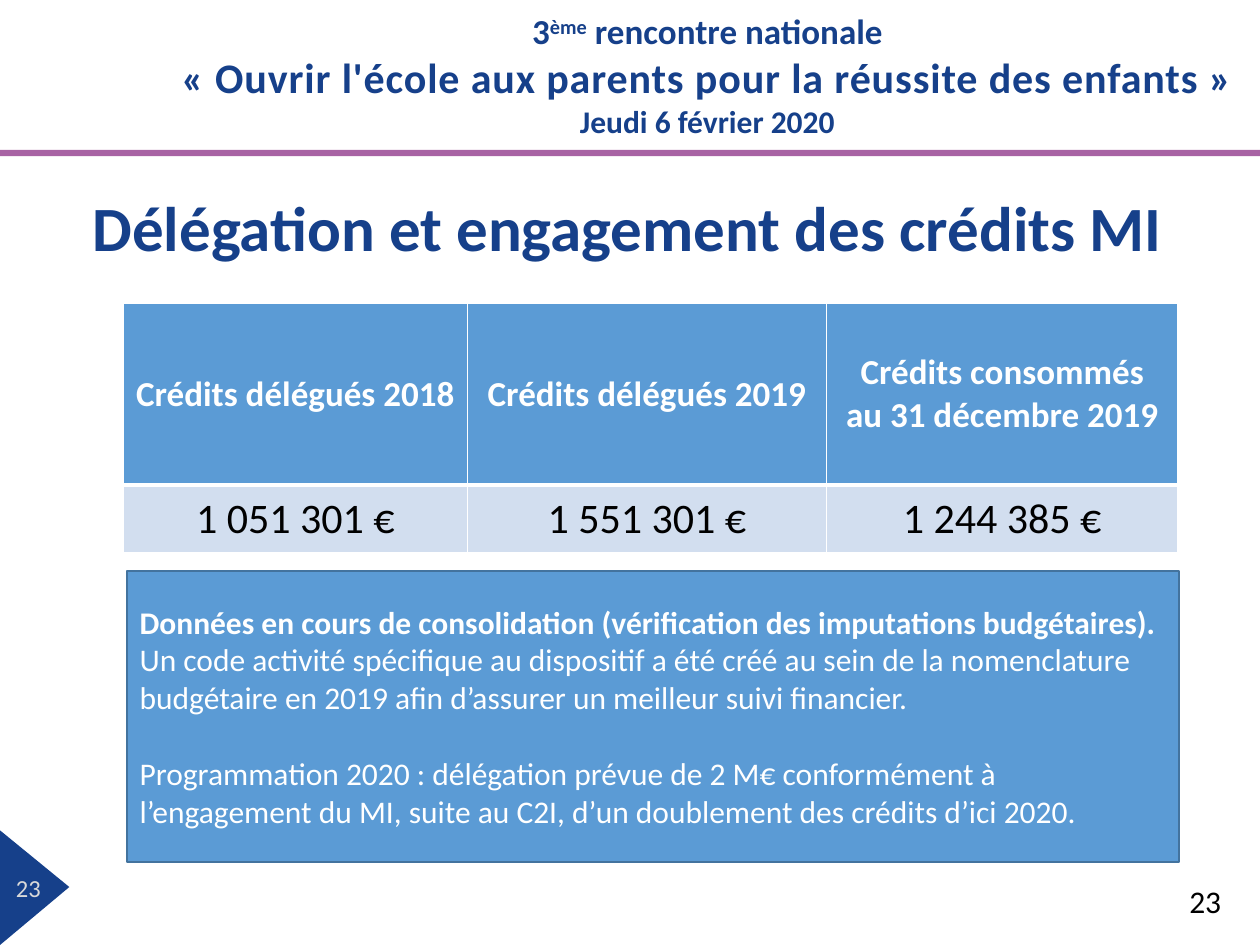
from lxml.etree import SubElement
from pptx import Presentation
from pptx.dml.color import RGBColor
from pptx.enum.shapes import MSO_SHAPE
from pptx.enum.text import MSO_ANCHOR, PP_ALIGN
from pptx.oxml.ns import qn
from pptx.util import Inches, Pt

NAVY = RGBColor(0x16, 0x40, 0x8A)
PURPLE = RGBColor(0xA8, 0x63, 0xA4)
BLUE = RGBColor(0x5B, 0x9B, 0xD5)
DARK_BLUE = RGBColor(0x43, 0x73, 0x9E)
PALE_BLUE = RGBColor(0xD2, 0xDE, 0xEF)
GREY = RGBColor(0xD9, 0xD9, 0xD9)
WHITE = RGBColor(0xFF, 0xFF, 0xFF)
BLACK = RGBColor(0, 0, 0)

# Content: each paragraph is a list of (text, font format, extra run attributes)
BANNER_FONT = {"bold": True, "color": NAVY}
EVENT = {**BANNER_FONT, "size": Pt(20)}
BANNER = [
    [("3", EVENT, {}), ("ème", EVENT, {"baseline": "30000"}),
     (" rencontre nationale", EVENT, {})],
    [("«\u00a0Ouvrir l'école aux parents pour la réussite des enfants\u00a0»",
      {**BANNER_FONT, "size": Pt(24)}, {"spc": "50"})],
    [("Jeudi 6 février 2020", {**BANNER_FONT, "size": Pt(18)}, {})],
]
TITLE = "Délégation et engagement des crédits MI"
PAGE = "23"
CREDITS = [
    ("Crédits délégués 2018", "1 051 301 €"),
    ("Crédits délégués 2019", "1 551 301 €"),
    ("Crédits consommés au 31 décembre 2019", "1 244 385 €"),
]
COLUMN_WIDTHS = [2.73, 2.85, 2.79]
ROWS = [  # height, fill, font format, bottom border in points
    (1.44, BLUE, {"size": Pt(20), "bold": True, "color": WHITE}, 3),
    (0.54, PALE_BLUE, {"size": Pt(24), "bold": False, "color": BLACK}, 1),
]
NOTE_FONT = {"size": Pt(18), "bold": False, "color": WHITE}
NOTES = [  # text, bold, space before in points
    ("Données en cours de consolidation (vérification des imputations budgétaires).",
     True, 0),
    ("Un code activité spécifique au dispositif a été créé au sein de la nomenclature "
     "budgétaire en 2019 afin d’assurer un meilleur suivi financier.", False, 0),
    ("Programmation 2020 : délégation prévue de 2 M€ conformément à l’engagement du MI, "
     "suite au C2I, d’un doublement des crédits d’ici 2020.", False, 22),
]


def box(left, top, width, height):
    return [Inches(value) for value in (left, top, width, height)]


def write(frame, paragraphs, align, anchor=MSO_ANCHOR.MIDDLE):
    frame.word_wrap = True
    frame.vertical_anchor = anchor
    for index, runs in enumerate(paragraphs):
        paragraph = frame.add_paragraph() if index else frame.paragraphs[0]
        paragraph.alignment = align
        for text, look, extra in runs:
            run = paragraph.add_run()
            run.text = text
            run.font.name = "Calibri"
            for key, value in look.items():
                if key == "color":
                    run.font.color.rgb = value
                else:
                    setattr(run.font, key, value)
            for key, value in extra.items():
                run.font._element.set(key, value)


def paint(shape, fill, line=None):
    shape.shadow.inherit = False
    shape.fill.solid()
    shape.fill.fore_color.rgb = fill
    if line:
        shape.line.color.rgb = line
        shape.line.width = Pt(1)
    else:
        shape.line.fill.background()


def add_borders(cell, widths):
    properties = cell._tc.get_or_add_tcPr()
    for index, (side, width) in enumerate(widths.items()):
        line = properties.makeelement(qn(f"a:{side}"), {"w": str(Pt(width))})
        fill = SubElement(line, qn("a:solidFill"))
        SubElement(fill, qn("a:srgbClr"), val=str(WHITE))
        properties.insert(index, line)


prs = Presentation()
prs.slide_width, prs.slide_height = Inches(10), Inches(7.5)
slide = prs.slides.add_slide(prs.slide_layouts[5])
shapes = slide.shapes

# Event banner and rule
banner = shapes.add_textbox(*box(1.23, 0, 8.77, 1.19))
write(banner.text_frame, BANNER, PP_ALIGN.CENTER)
rule = shapes.add_shape(MSO_SHAPE.RECTANGLE, *box(0, 1.19, 10, 0.05))
paint(rule, PURPLE)

# Corner triangle with its page number
outline = shapes.build_freeform(Inches(0), Inches(6.59))
outline.add_line_segments(
    [(Inches(x), Inches(y)) for x, y in [(0, 7.5), (0.55, 7.04)]], close=True)
paint(outline.convert_to_shape(), NAVY)
corner_page = shapes.add_textbox(*box(-0.05, 6.87, 0.55, 0.35))
for side in ("left", "top", "right", "bottom"):
    setattr(corner_page.text_frame, f"margin_{side}", Inches(0.04))
write(corner_page.text_frame, [[(PAGE, {"size": Pt(14), "color": GREY}, {})]],
      PP_ALIGN.CENTER)

# Title
title = shapes.title
title.left, title.top, title.width, title.height = box(0.26, 1.51, 9.44, 0.65)
write(title.text_frame, [[(TITLE, {**BANNER_FONT, "size": Pt(36)}, {})]],
      PP_ALIGN.CENTER)
title.text_frame.paragraphs[0].line_spacing = 0.9

# Page number
page = shapes.add_textbox(*box(9.34, 6.95, 0.61, 0.4))
write(page.text_frame, [[(PAGE, {"size": Pt(18), "color": BLACK}, {})]],
      PP_ALIGN.LEFT, MSO_ANCHOR.TOP)

# Credits table
table = shapes.add_table(
    len(ROWS), len(CREDITS),
    *box(0.98, 2.41, sum(COLUMN_WIDTHS), sum(row[0] for row in ROWS))).table
for column, width in zip(table.columns, COLUMN_WIDTHS):
    column.width = Inches(width)
for r, (height, fill, look, bottom) in enumerate(ROWS):
    table.rows[r].height = Inches(height)
    top = ROWS[r - 1][3] if r else 1
    for c, credit in enumerate(CREDITS):
        cell = table.cell(r, c)
        cell.fill.solid()
        cell.fill.fore_color.rgb = fill
        cell.vertical_anchor = MSO_ANCHOR.MIDDLE
        write(cell.text_frame, [[(credit[r], look, {})]], PP_ALIGN.CENTER)
        add_borders(cell, {"lnL": 1, "lnR": 1, "lnT": top, "lnB": bottom})

# Notes panel
panel = shapes.add_shape(MSO_SHAPE.FLOWCHART_PROCESS, *box(1.01, 4.53, 8.35, 2.31))
paint(panel, BLUE, DARK_BLUE)
write(panel.text_frame,
      [[(text, {**NOTE_FONT, "bold": bold}, {})] for text, bold, _ in NOTES],
      PP_ALIGN.LEFT)
for paragraph, (_, _, gap) in zip(panel.text_frame.paragraphs, NOTES):
    paragraph.space_before = Pt(gap)

prs.save("out.pptx")
